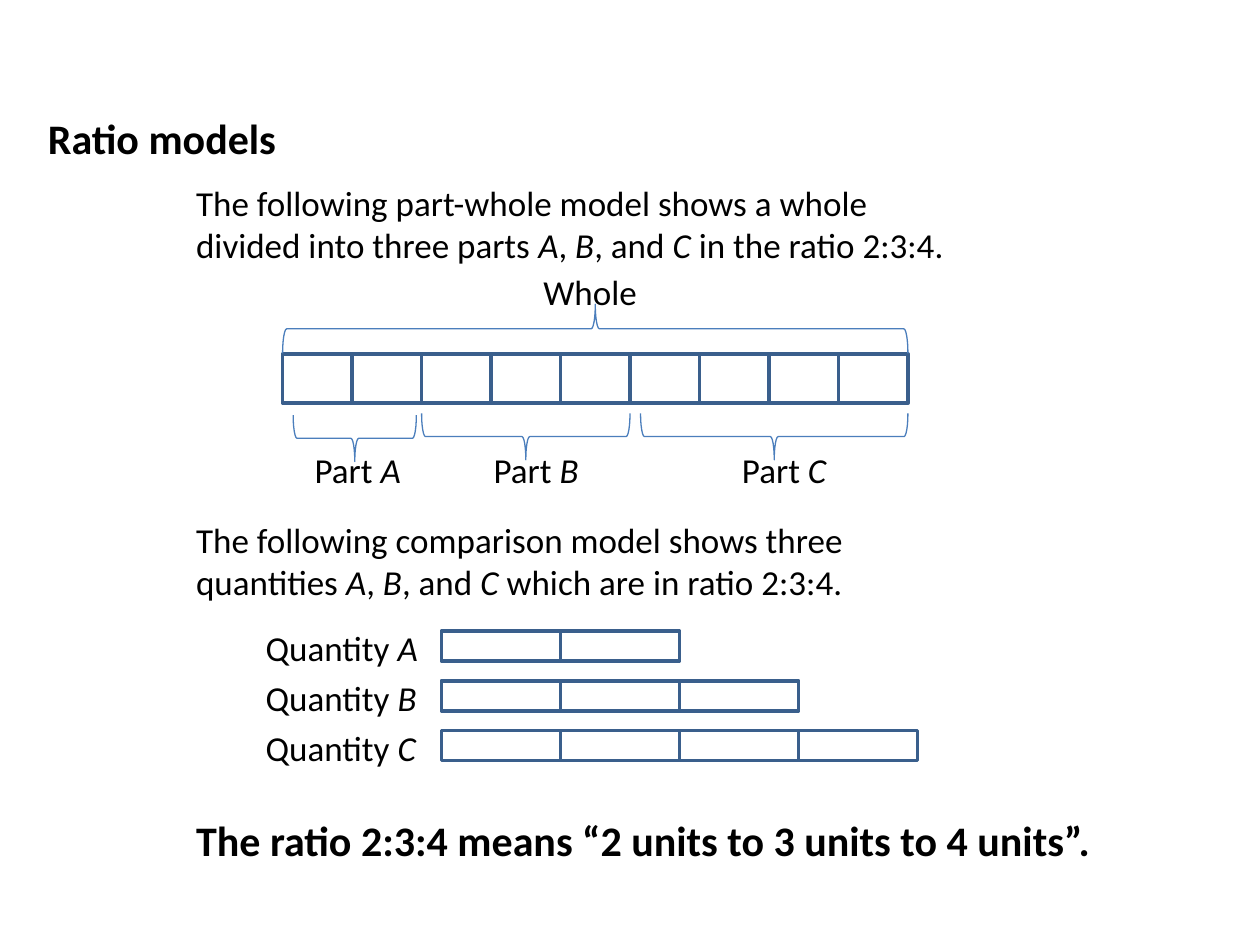
from dataclasses import dataclass

from pptx import Presentation
from pptx import util as u
from pptx.dml.color import RGBColor
from pptx.enum import shapes as kinds, text as t


@dataclass(frozen=True)
class Theme:
    """Colours, font and sizes of the slide."""
    font: str = "Calibri"
    ink: RGBColor = RGBColor(0x00, 0x00, 0x00)
    unit_line: RGBColor = RGBColor(0x3A, 0x5F, 0x8C)
    brace_line: RGBColor = RGBColor(0x4B, 0x7E, 0xBC)
    heading_size: float = 24
    body_size: float = 20
    unit_weight: float = 2
    brace_weight: float = 0.75


@dataclass(frozen=True)
class Box:
    """A region in points."""
    left: float
    top: float
    width: float
    height: float

    def inner(self, left, top, width, height):
        """Return a box placed relative to this one."""
        return Box(self.left + left, self.top + top, width, height)

    def lengths(self):
        """Return left, top, width and height as lengths."""
        return [u.Pt(round(value, 2)) for value in (self.left, self.top, self.width, self.height)]


@dataclass(frozen=True)
class Part:
    """One part of the ratio and the fit of its brace and label."""
    name: str
    units: int
    inset_left: float = 0
    inset_right: float = 0
    drop: float = 0
    label_shift: float = -25.5


THEME = Theme()
PARTS = [
    Part("A", 2, inset_left=6, inset_right=3, drop=1, label_shift=-30),
    Part("B", 3),
    Part("C", 4, inset_left=6),
]


def style_run(run, size, bold=False, italic=False):
    """Apply the theme font to a run."""
    run.font.name = THEME.font
    run.font.size = u.Pt(size)
    run.font.color.rgb = THEME.ink
    run.font.bold = bold
    run.font.italic = italic


def add_text(shapes, box, wording, size=THEME.body_size, bold=False, align=t.PP_ALIGN.LEFT):
    """Add a text box; words between underscores are italic."""
    frame = shapes.add_textbox(*box.lengths()).text_frame
    frame.word_wrap = True
    frame.auto_size = t.MSO_AUTO_SIZE.SHAPE_TO_FIT_TEXT
    paragraph = frame.paragraphs[0]
    paragraph.alignment = align
    for index, piece in enumerate(wording.split("_")):
        if piece:
            run = paragraph.add_run()
            run.text = piece
            style_run(run, size, bold, italic=index % 2 == 1)


def add_outline(shapes, kind, box, colour, weight):
    """Add an unfilled preset shape."""
    shape = shapes.add_shape(kind, *box.lengths())
    shape.shadow.inherit = False
    shape.fill.background()
    shape.line.color.rgb = colour
    shape.line.width = u.Pt(weight)
    return shape


def add_units(shapes, box, count):
    """Divide a box into equal unit rectangles."""
    width = box.width / count
    for index in range(count):
        unit = box.inner(index * width, 0, width, box.height)
        add_outline(shapes, kinds.MSO_SHAPE.RECTANGLE, unit, THEME.unit_line, THEME.unit_weight)


def add_brace(shapes, kind, box):
    """Add a brace turned to lie along the width of a box."""
    upright = box.inner((box.width - box.height) / 2, (box.height - box.width) / 2,
                        box.height, box.width)
    add_outline(shapes, kind, upright, THEME.brace_line, THEME.brace_weight).rotation = 90


def add_title(slide, box):
    """Place and format the title placeholder."""
    title = slide.shapes.title
    title.left, title.top, title.width, title.height = box.lengths()
    frame = title.text_frame
    frame.text = "Ratio models"
    frame.auto_size = t.MSO_AUTO_SIZE.NONE
    frame.vertical_anchor = t.MSO_ANCHOR.MIDDLE
    frame.paragraphs[0].alignment = t.PP_ALIGN.LEFT
    style_run(frame.paragraphs[0].runs[0], THEME.heading_size, bold=True)


def add_part_whole_model(slide, box):
    """Draw the whole bar with braces and labels for its parts."""
    total = sum(part.units for part in PARTS)
    unit = box.width / total
    bar = slide.shapes.add_group_shape().shapes
    add_units(bar, box.inner(0, 51, box.width, 28.3), total)
    add_brace(slide.shapes, kinds.MSO_SHAPE.LEFT_BRACE, box.inner(0, 22.7, box.width, 28))
    add_text(slide.shapes, box.inner(113.5, 0, 124.5, 31.5), "Whole", align=t.PP_ALIGN.CENTER)
    labels = slide.shapes.add_group_shape().shapes
    braces = slide.shapes.add_group_shape().shapes
    start = 0
    for part in PARTS:
        left = start * unit + part.inset_left
        width = part.units * unit - part.inset_left - part.inset_right
        add_brace(braces, kinds.MSO_SHAPE.RIGHT_BRACE,
                  box.inner(left, 85 + part.drop, width, 26.6))
        add_text(labels, box.inner(left + width / 2 + part.label_shift, 101.5, 79.2, 31.5),
                 f"Part _{part.name}_")
        start += part.units


def add_comparison_model(slide, box):
    """Draw one labelled bar for each quantity."""
    bar_left = 107.5
    unit = (box.width - bar_left) / max(part.units for part in PARTS)
    pitch = box.height / len(PARTS)
    for row, part in enumerate(PARTS):
        top = row * pitch
        add_units(slide.shapes, box.inner(bar_left, top + 6, part.units * unit, 17.2), part.units)
        add_text(slide.shapes, box.inner(0, top, 113, 31.5), f"Quantity _{part.name}_")


def build_slide(presentation):
    """Compose the ratio models slide."""
    slide = presentation.slides.add_slide(presentation.slide_layouts[5])
    add_title(slide, Box(20.2, 20.9, 686.2, 115.9))
    add_text(slide.shapes, Box(105, 100.1, 442.5, 55.7),
             "The following part-whole model shows a whole divided into three parts "
             "_A_, _B_, and _C_ in the ratio 2:3:4.")
    add_part_whole_model(slide, Box(161.5, 151.2, 357.3, 133))
    add_text(slide.shapes, Box(105, 293, 453.6, 55.7),
             "The following comparison model shows three quantities "
             "_A_, _B_, and _C_ which are in ratio 2:3:4.")
    add_comparison_model(slide, Box(144.7, 354.6, 379.7, 85.2))
    add_text(slide.shapes, Box(105, 462.2, 538.6, 36),
             "The ratio 2:3:4 means “2 units to 3 units to 4 units”.",
             size=THEME.heading_size, bold=True)


def main():
    """Build and save the presentation."""
    presentation = Presentation()
    presentation.slide_width = u.Pt(720)
    presentation.slide_height = u.Pt(540)
    build_slide(presentation)
    presentation.save("out.pptx")


if __name__ == "__main__":
    main()
